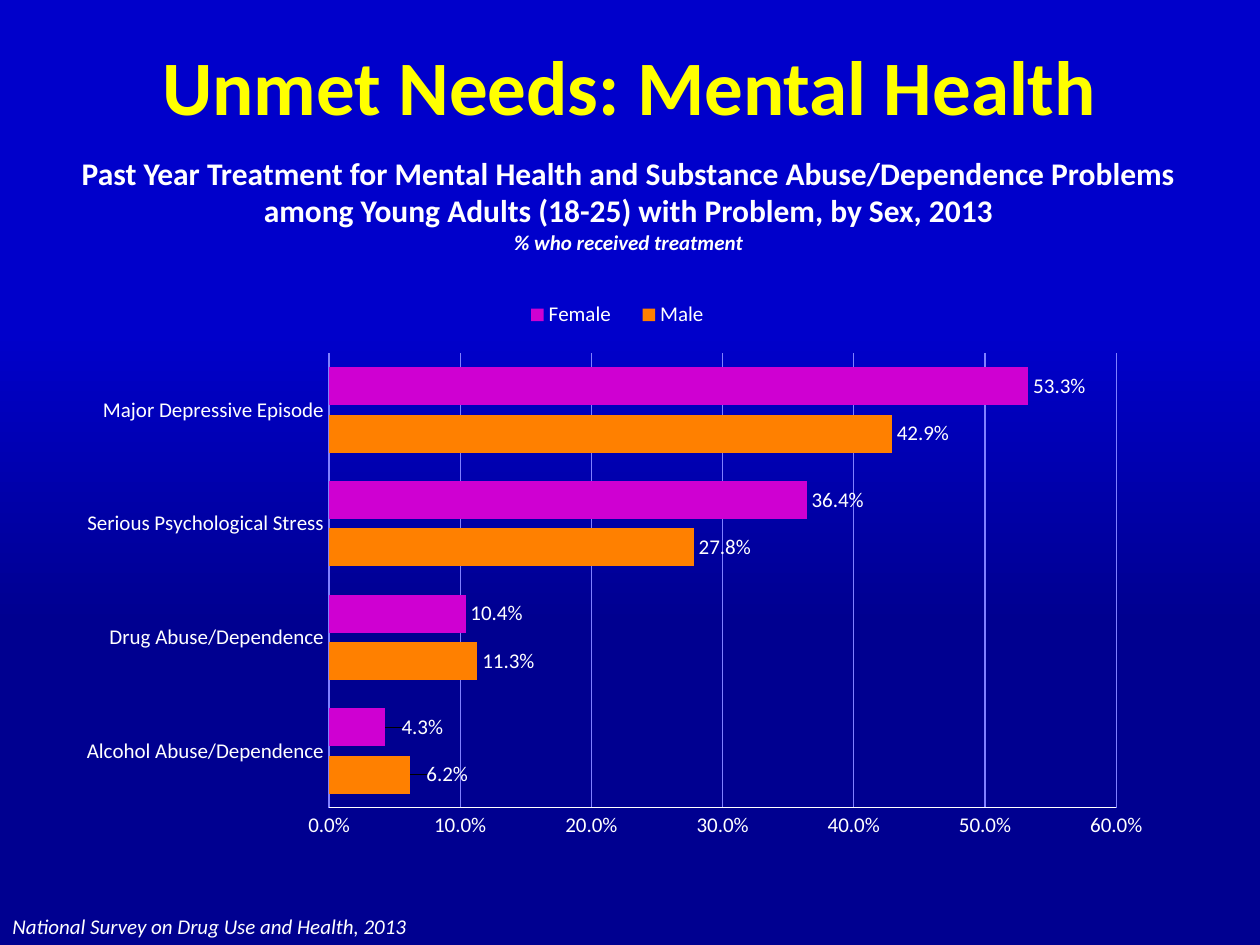
from dataclasses import dataclass

from lxml.etree import SubElement
from pptx import Presentation
from pptx.chart.data import CategoryChartData
from pptx.dml.color import RGBColor
from pptx.enum.chart import XL_CHART_TYPE as ChartType
from pptx.enum.chart import XL_LABEL_POSITION as LabelPosition
from pptx.enum.chart import XL_LEGEND_POSITION as LegendPosition
from pptx.enum.chart import XL_TICK_MARK as TickMark
from pptx.enum.text import MSO_ANCHOR as Anchor
from pptx.enum.text import PP_ALIGN as Align
from pptx.oxml import parse_xml
from pptx.oxml.ns import nsdecls, qn
from pptx.util import Inches, Pt


@dataclass(frozen=True)
class Theme:
    font: str = "Calibri"
    title_size: int = 44
    heading_size: int = 18
    small_size: int = 12
    title: str = "FFFF00"
    text: str = "FFFFFF"
    grid: str = "8080FF"
    background: tuple = ((0.34, "000090"), (0.65, "0000CB"))


THEME = Theme()
WIDTH, HEIGHT = Inches(10), Inches(7.5)
CATEGORIES = (
    "Alcohol Abuse/Dependence",
    "Drug Abuse/Dependence",
    "Serious Psychological Stress",
    "Major Depressive Episode",
)
SERIES = (
    ("Male", "FF8000", (0.062, 0.113, 0.278, 0.429)),
    ("Female", "CF00D2", (0.043, 0.104, 0.364, 0.533)),
)
PERCENT = "0.0%"


def rgb(value):
    return RGBColor.from_string(value)


def place(left, top, width, height):
    """Turn shares of the slide into a position and a size."""
    return (int(left * WIDTH), int(top * HEIGHT),
            int(width * WIDTH), int(height * HEIGHT))


def style_font(font, size=THEME.small_size, color=THEME.text, bold=False, italic=False):
    font.name = THEME.font
    font.size = Pt(size)
    font.bold = bold
    font.italic = italic
    font.color.rgb = rgb(color)


def paint_background(slide):
    fill = slide.background.fill
    fill.gradient()
    fill.gradient_angle = 90
    for stop, (position, color) in zip(fill.gradient_stops, THEME.background):
        stop.position = position
        stop.color.rgb = rgb(color)


def add_text(slide, box, lines, align=Align.LEFT, anchor=Anchor.TOP, wrap=True):
    """Add a text box; each line is a text with its font settings."""
    text_frame = slide.shapes.add_textbox(*place(*box)).text_frame
    text_frame.word_wrap = wrap
    text_frame.vertical_anchor = anchor
    text_frame.text = "\n".join(text for text, _ in lines)
    for paragraph, (_, settings) in zip(text_frame.paragraphs, lines):
        paragraph.alignment = align
        style_font(paragraph.runs[0].font, **settings)


def set_layout(parent, index, **values):
    """Give a chart part a manual layout, in shares of the chart."""
    for old in parent.findall(qn("c:layout")):
        parent.remove(old)
    layout = parse_xml(f"<c:layout {nsdecls('c')}><c:manualLayout/></c:layout>")
    for name, value in values.items():
        SubElement(layout[0], qn(f"c:{name}")).set("val", str(value))
    parent.insert(index, layout)


def style_axes(chart):
    for axis in (chart.category_axis, chart.value_axis):
        axis.major_tick_mark = axis.minor_tick_mark = TickMark.NONE
        style_font(axis.tick_labels.font)
    chart.category_axis.format.line.fill.background()
    axis = chart.value_axis
    axis.minimum_scale, axis.maximum_scale, axis.major_unit = 0, 0.6, 0.1
    axis.tick_labels.number_format = PERCENT
    axis.tick_labels.number_format_is_linked = False
    axis.format.line.color.rgb = rgb(THEME.text)
    axis.format.line.width = Pt(0.75)
    axis.has_major_gridlines = True
    gridline = axis.major_gridlines.format.line
    gridline.color.rgb = rgb(THEME.grid)
    gridline.width = Pt(0.75)


def style_series(series, color):
    series.format.fill.solid()
    series.format.fill.fore_color.rgb = rgb(color)
    series.invert_if_negative = False
    labels = series.data_labels
    labels.show_value = True
    labels.number_format = PERCENT
    labels.number_format_is_linked = False
    labels.position = LabelPosition.OUTSIDE_END
    style_font(labels.font)
    first_label = series.points[0].data_label
    style_font(first_label.font)
    first_label.position = LabelPosition.OUTSIDE_END


def add_treatment_chart(slide, box):
    data = CategoryChartData(number_format=PERCENT)
    data.categories = CATEGORIES
    for name, _, values in SERIES:
        data.add_series(name, values)
    chart = slide.shapes.add_chart(ChartType.BAR_CLUSTERED, *place(*box), data).chart
    chart.has_title = False
    style_font(chart.font)
    style_axes(chart)

    plot = chart.plots[0]
    plot.gap_width, plot.overlap, plot.vary_by_categories = 75, -25, False
    for series, (_, color, _) in zip(plot.series, SERIES):
        style_series(series, color)

    chart.has_legend = True
    chart.legend.position = LegendPosition.BOTTOM
    chart.legend.include_in_layout = False
    style_font(chart.legend.font)

    root = chart.element
    set_layout(root.find(".//" + qn("c:plotArea")), 0, layoutTarget="inner",
               xMode="edge", yMode="edge", x=0.24, y=0.11, w=0.71, h=0.77)
    set_layout(root.find(".//" + qn("c:legend")), 1,
               xMode="edge", yMode="edge", x=0.4, y=0.01, w=0.2, h=0.07)
    for label in root.iter(qn("c:dLbl")):
        set_layout(label, 1, x=0.01, y=0)


def main():
    presentation = Presentation()
    presentation.slide_width, presentation.slide_height = WIDTH, HEIGHT
    slide = presentation.slides.add_slide(presentation.slide_layouts[6])
    paint_background(slide)
    add_text(slide, (0.05, 0.03, 0.9, 0.12),
             [("Unmet Needs: Mental Health",
               dict(size=THEME.title_size, color=THEME.title, bold=True))],
             Align.CENTER, Anchor.MIDDLE)
    add_treatment_chart(slide, (0.05, 0.305, 0.88, 0.625))
    add_text(slide, (0, 0.96, 0.34, 0.08),
             [("National Survey on Drug Use and Health, 2013", dict(italic=True))],
             wrap=False)
    add_text(slide, (0.036, 0.156, 0.926, 0.12),
             [("Past Year Treatment for Mental Health and Substance Abuse/Dependence "
               "Problems among Young Adults (18-25) with Problem, by Sex, 2013",
               dict(size=THEME.heading_size, bold=True)),
              ("% who received treatment", dict(bold=True, italic=True))],
             Align.CENTER)
    presentation.save("out.pptx")


if __name__ == "__main__":
    main()
